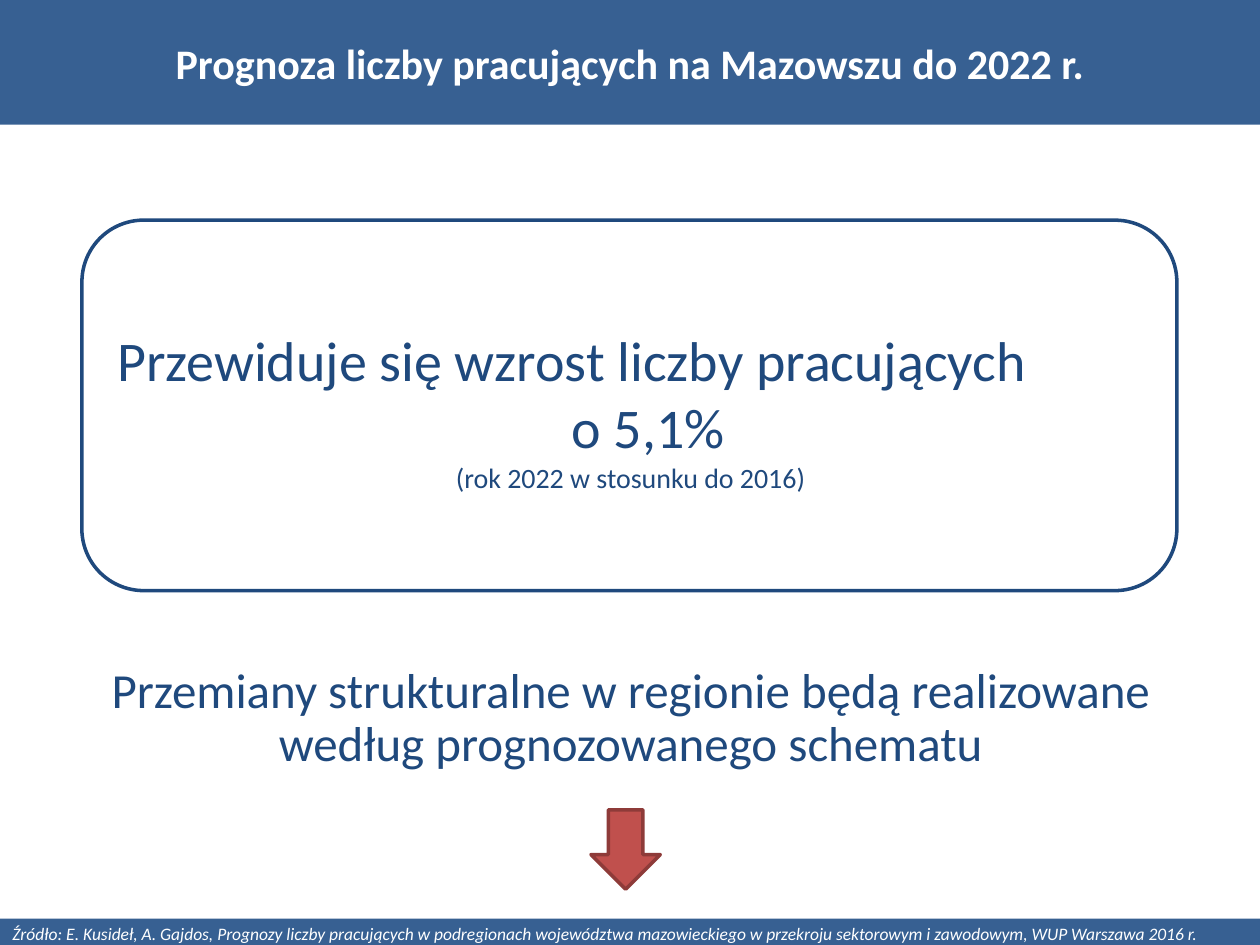
import pptx
import pptx.util
import pptx.dml.color
import pptx.enum.shapes
import pptx.enum.text

Inch = pptx.util.Inches
Pt = pptx.util.Pt
Form = pptx.enum.shapes.MSO_SHAPE
Align = pptx.enum.text.PP_ALIGN

BLUE, NAVY, WHITE = "376092", "1F497D", "FFFFFF"
RED, DARK = "C0504D", "8E3B39"


def tint(code):
    return pptx.dml.color.RGBColor.from_string(code)


class Deck:
    """Holds the style and the current slide; places are percent of its size."""
    font = "Calibri"

    def __init__(self, wide, high):
        self.show = pptx.Presentation()
        self.show.slide_width = Inch(wide)
        self.show.slide_height = Inch(high)
        self.slide = self.show.slides.add_slide(self.show.slide_layouts[6])

    def place(self, left, top, wide, high):
        w, h = self.show.slide_width, self.show.slide_height
        return [round(part * size / 100)
                for part, size in zip((left, top, wide, high), (w, h, w, h))]

    def shape(self, form, spot, fill=None, line=None):
        item = self.slide.shapes.add_shape(form, *self.place(*spot))
        item.shadow.inherit = False
        if fill:
            item.fill.solid()
            item.fill.fore_color.rgb = tint(fill)
        else:
            item.fill.background()
        if line:
            item.line.color.rgb = tint(line)
            item.line.width = Pt(2)
        else:
            item.line.fill.background()
        return item

    def label(self, item, text, sizes, color, align=Align.CENTER,
              bold=False, slant=False):
        frame = item.text_frame
        frame.word_wrap = True
        frame.vertical_anchor = pptx.enum.text.MSO_ANCHOR.MIDDLE
        frame.text = text
        for para, size in zip(frame.paragraphs, sizes):
            para.alignment = align
            for run in para.runs:
                run.font.name, run.font.size = self.font, Pt(size)
                run.font.bold, run.font.italic = bold, slant
                run.font.color.rgb = tint(color)
        return frame

    def band(self, spot, text, size, **style):
        item = self.shape(Form.RECTANGLE, spot, BLUE)
        return self.label(item, text, [size], WHITE, **style)

    def text(self, spot, text, sizes, inset):
        item = self.slide.shapes.add_textbox(*self.place(*spot))
        frame = self.label(item, text, sizes, NAVY)
        frame.margin_left = frame.margin_right = Inch(inset)
        frame.margin_top = frame.margin_bottom = Inch(inset)
        return frame


def main():
    deck = Deck(10, 7.5)

    # Title and source bands
    deck.band((0, 0, 100, 13.2),
              "Prognoza liczby pracujących na Mazowszu do 2022 r.", 24, bold=True)
    deck.band((0, 97.2, 100, 3.2),
              "Źródło: E. Kusideł, A. Gajdos, Prognozy liczby pracujących "
              "w podregionach województwa mazowieckiego w przekroju sektorowym "
              "i zawodowym, WUP Warszawa 2016 r.",
              10, align=Align.LEFT, slant=True)

    # Framed forecast: first line flush left, figure set right of centre
    deck.shape(Form.ROUNDED_RECTANGLE, (6.5, 23.3, 86.9, 39.2), line=NAVY)
    frame = deck.text((8, 25.6, 84.1, 35.5),
                      "Przewiduje się wzrost liczby pracujących\n"
                      "o 5,1%\n(rok 2022 w stosunku do 2016)",
                      [32, 32, 16], 0.13)
    lead, rate = frame.paragraphs[:2]
    lead.alignment = Align.LEFT
    rate._p.get_or_add_pPr().set("marL", str(Inch(0.28)))

    # Conclusion and arrow
    frame = deck.text((6, 64.1, 88.1, 24),
                      "Przemiany strukturalne w\u00a0regionie będą realizowane "
                      "według prognozowanego schematu", [28], 0.12)
    frame.paragraphs[0].line_spacing = 0.9
    deck.shape(Form.DOWN_ARROW, (46.9, 85.7, 5.5, 8.4), RED, DARK)

    deck.show.save("out.pptx")


if __name__ == "__main__":
    main()
